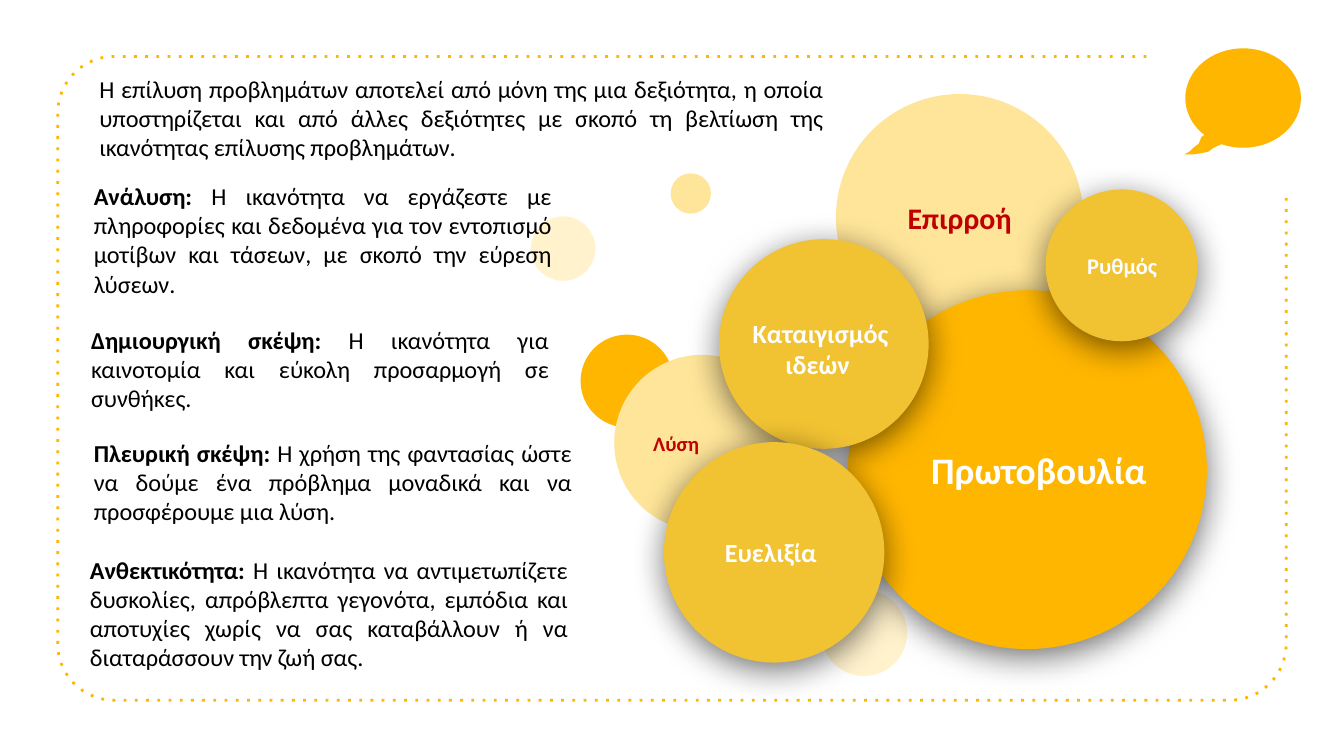
from math import cos, radians, sin

from lxml import etree
from pptx import Presentation
from pptx.dml.color import RGBColor
from pptx.enum.dml import MSO_LINE
from pptx.enum.shapes import MSO_SHAPE
from pptx.enum.text import MSO_ANCHOR, PP_ALIGN
from pptx.oxml.ns import qn
from pptx.util import Inches, Pt

AMBER = RGBColor(0xFF, 0xB6, 0x00)
GOLD = RGBColor(0xF1, 0xC2, 0x32)
CREAM = RGBColor(0xFF, 0xE5, 0x99)
PALE = RGBColor(0xFF, 0xF2, 0xCC)
RED = RGBColor(0xC0, 0x00, 0x00)
WHITE = RGBColor(0xFF, 0xFF, 0xFF)
BLACK = RGBColor(0x00, 0x00, 0x00)
FONT = "Calibri"

# Paragraphs: left, top, width, height, bold lead, body
PARAGRAPHS = [
    (0.64, 0.5, 5.58, 0.76, "",
     "Η επίλυση προβλημάτων αποτελεί από μόνη της μια δεξιότητα, η οποία υποστηρίζεται "
     "και από άλλες δεξιότητες με σκοπό τη βελτίωση της ικανότητας επίλυσης προβλημάτων."),
    (0.6, 1.3, 3.6, 0.98, "Ανάλυση: ",
     "Η ικανότητα να εργάζεστε με πληροφορίες και δεδομένα για τον εντοπισμό "
     "μοτίβων και τάσεων, με σκοπό την εύρεση λύσεων."),
    (0.58, 2.37, 3.6, 0.76, "Δημιουργική σκέψη: ",
     "Η ικανότητα για καινοτομία και εύκολη προσαρμογή σε συνθήκες."),
    (0.6, 3.21, 3.75, 0.76, "Πλευρική σκέψη: ",
     "Η χρήση της φαντασίας ώστε να δούμε ένα πρόβλημα μοναδικά και να προσφέρουμε μια λύση."),
    (0.57, 4.08, 3.75, 0.98, "Ανθεκτικότητα: ",
     "Η ικανότητα να αντιμετωπίζετε δυσκολίες, απρόβλεπτα γεγονότα, εμπόδια και αποτυχίες "
     "χωρίς να σας καταβάλλουν ή να διαταράσσουν την ζωή σας. "),
]

# Plain circles, back to front: left, top, diameter, fill, label (text, size, align)
FLAT_CIRCLES = [
    (6.11, 4.39, 0.64, PALE, None),
    (3.95, 1.61, 0.48, PALE, None),
    (6.22, 0.7, 1.84, CREAM, ("Επιρροή", 16, PP_ALIGN.CENTER)),
    (4.32, 2.49, 0.69, AMBER, None),
    (4.99, 1.29, 0.3, CREAM, None),
    (4.57, 2.64, 1.31, CREAM, ("Λύση", 11, PP_ALIGN.LEFT)),
]

# Raised circles: left, top, diameter, fill, label, size, label box
RAISED_CIRCLES = [
    (6.31, 2.16, 2.67, AMBER, "Πρωτοβουλία", 20, (6.64, 2.86, 2.18, 1.27)),
    (5.35, 1.78, 1.56, GOLD, "Καταιγισμός ιδεών ", 14, (5.28, 2.08, 1.65, 1.03)),
    (4.94, 3.29, 1.64, GOLD, "Ευελιξία", 14, (5.13, 3.59, 1.21, 1.03)),
    (7.78, 1.41, 1.13, GOLD, "Ρυθμός", 12, (7.93, 1.6, 0.84, 0.75)),
]

# Dotted frame, open at the top right corner
LEFT, TOP, RIGHT, BOTTOM, RADIUS = 0.43, 0.42, 9.57, 5.21, 0.42
FRAME_START, FRAME_END = (8.53, TOP), (RIGHT, 1.46)

# Speech bubble: ellipse centre and radii, then the tail
BUBBLE = (9.25, 0.73, 0.43, 0.37)
TAIL = [(9.03, 1.1), (8.99, 1.13), (8.94, 1.14), (8.88, 1.15), (8.81, 1.15),
        (8.85, 1.13), (8.88, 1.1), (8.92, 1.07), (8.94, 1.02)]

# 16:9 slide
prs = Presentation()
prs.slide_width = Inches(10)
prs.slide_height = prs.slide_width * 9 // 16
s = prs.slides.add_slide(prs.slide_layouts[6])


def arc(cx, cy, rx, ry, start, end, steps):
    angles = [radians(start + (end - start) * i / steps) for i in range(steps + 1)]
    return [(cx + rx * cos(a), cy + ry * sin(a)) for a in angles]


def outline(points, close):
    pts = [(Inches(x), Inches(y)) for x, y in points]
    builder = s.shapes.build_freeform(*pts[0])
    builder.add_line_segments(pts[1:], close=close)
    sp = builder.convert_to_shape()
    sp.shadow.inherit = False
    return sp


def add_run(p, text, color, **fmt):
    r = p.add_run()
    r.text = text
    r.font.color.rgb = color
    for name, value in {"name": FONT, **fmt}.items():
        setattr(r.font, name, value)


def add_label(sp, text, size, color, align=PP_ALIGN.CENTER):
    tf = sp.text_frame
    margins = dict.fromkeys(
        ("margin_left", "margin_top", "margin_right", "margin_bottom"), Inches(0.1))
    for name, value in {"word_wrap": True, "vertical_anchor": MSO_ANCHOR.MIDDLE, **margins}.items():
        setattr(tf, name, value)
    p = tf.paragraphs[0]
    p.alignment = align
    add_run(p, text, color, size=Pt(size), bold=True)


def add_shape(kind, box, fill):
    sp = s.shapes.add_shape(kind, *map(Inches, box))
    sp.shadow.inherit = False
    sp.fill.solid()
    sp.fill.fore_color.rgb = fill
    sp.line.fill.background()
    return sp


def add_shadow(sp):
    effects = sp._element.spPr.find(qn("a:effectLst"))
    shadow = etree.SubElement(effects, qn("a:outerShdw"), blurRad=str(Pt(18)),
                              dist=str(Pt(4)), dir="5400000", algn="ctr", rotWithShape="0")
    color = etree.SubElement(shadow, qn("a:srgbClr"), val=str(BLACK))
    etree.SubElement(color, qn("a:alpha"), val="55000")


# Frame
x0, x1, y0, y1 = LEFT + RADIUS, RIGHT - RADIUS, TOP + RADIUS, BOTTOM - RADIUS
corners = [(x0, y0, 270), (x0, y1, 180), (x1, y1, 90)]
frame_points = [FRAME_START]
for cx, cy, start in corners:
    frame_points += arc(cx, cy, RADIUS, RADIUS, start, start - 90, 16)
frame = outline(frame_points + [FRAME_END], close=False)
frame.fill.background()
frame.line.color.rgb = AMBER
frame.line.width = Pt(1.5)
frame.line.dash_style = MSO_LINE.ROUND_DOT
frame._element.spPr.find(".//" + qn("a:prstDash")).set("val", "dot")

# Circles
for left, top, size, fill, label in FLAT_CIRCLES:
    circle = add_shape(MSO_SHAPE.OVAL, (left, top, size, size), fill)
    if label:
        text, pts, align = label
        add_label(circle, text, pts, RED, align)

for left, top, size, fill, text, pts, box in RAISED_CIRCLES:
    add_shadow(add_shape(MSO_SHAPE.OVAL, (left, top, size, size), fill))
    if fill == AMBER:
        label_box = add_shape(MSO_SHAPE.RECTANGLE, box, fill)
    else:
        label_box = s.shapes.add_textbox(*map(Inches, box))
    add_label(label_box, text, pts, WHITE)

# Speech bubble
bubble = outline(arc(*BUBBLE, 132, 472, 72) + TAIL, close=True)
bubble.fill.solid()
bubble.fill.fore_color.rgb = AMBER
bubble.line.fill.background()

# Paragraphs
for *box, lead, body in PARAGRAPHS:
    tf = s.shapes.add_textbox(*map(Inches, box)).text_frame
    tf.word_wrap = True
    p = tf.paragraphs[0]
    p.alignment = PP_ALIGN.JUSTIFY
    for text, bold in ((lead, True), (body, False)):
        if text:
            add_run(p, text, BLACK, size=Pt(13), bold=bold)

prs.save("out.pptx")
